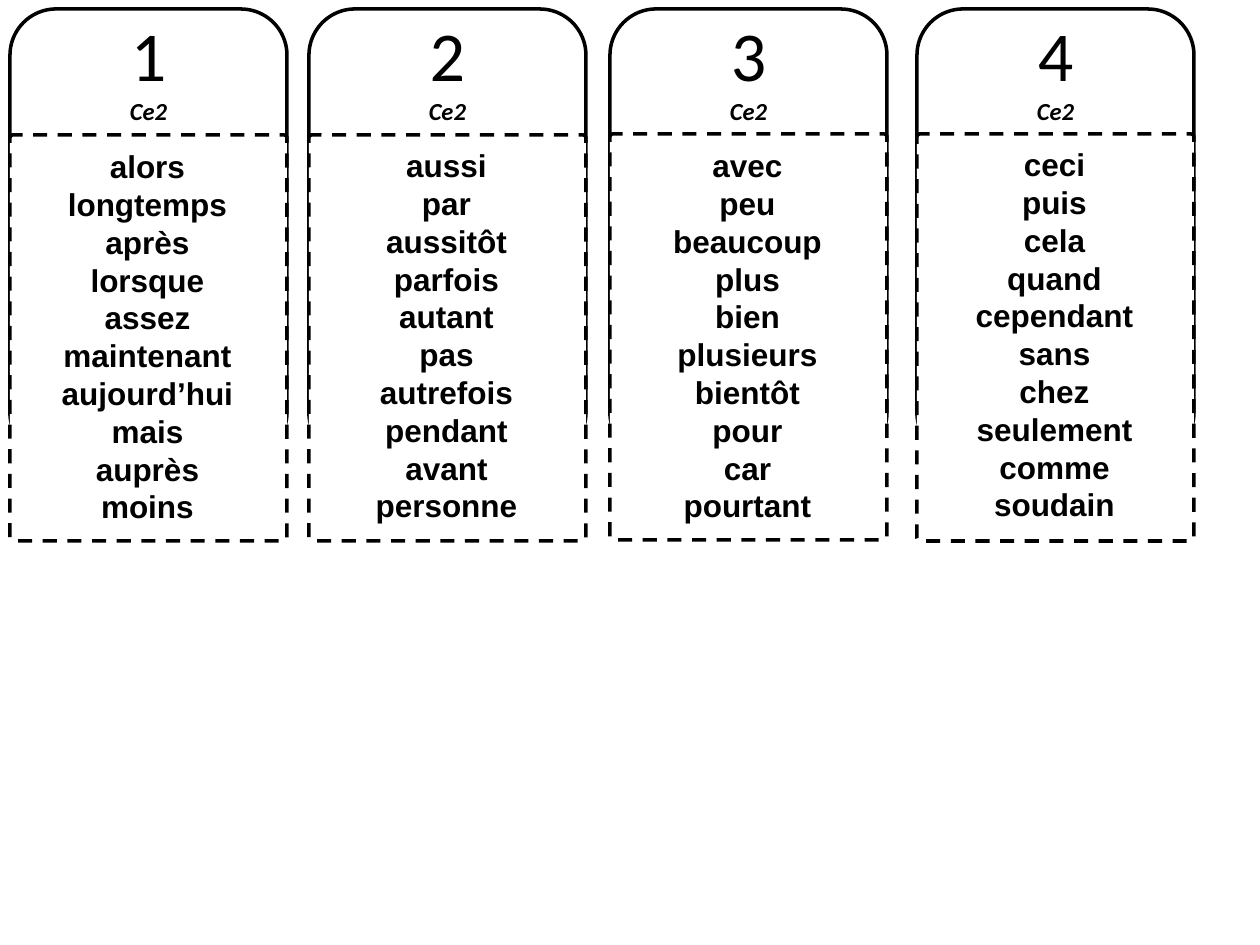
from pptx import Presentation
from pptx.dml.color import RGBColor
from pptx.enum.dml import MSO_LINE
from pptx.enum.shapes import MSO_SHAPE
from pptx.enum.text import MSO_ANCHOR, MSO_AUTO_SIZE, PP_ALIGN
from pptx.util import Emu, Pt

ROUNDED = MSO_SHAPE.ROUNDED_RECTANGLE
DASH = MSO_LINE.DASH
MIDDLE = MSO_ANCHOR.MIDDLE
CENTER = PP_ALIGN.CENTER
GROW = MSO_AUTO_SIZE.SHAPE_TO_FIT_TEXT

BLACK, WHITE = "000000", "FFFFFF"
CARD_TOP, CARD_WIDTH, CARD_HEIGHT = 9, 277, 450
WORDS_HEIGHT = 394
HEADING_BOTTOM_INSET = 331

NUMBER_FORMAT = {"name": "Calibri", "size": Pt(40)}
LEVEL_FORMAT = {"name": "Calibri", "size": Pt(14), "bold": True, "italic": True}
WORD_FORMAT = {"name": "Arial", "size": Pt(18), "bold": True}

# left, top of the dashed frame, its height, top of the words, their width, words
CARDS = [
    (10, 135, 406, 141, 215,
     "alors longtemps après lorsque assez maintenant aujourd’hui mais auprès moins"),
    (309, 135, 406, 140, 215,
     "aussi par aussitôt parfois autant pas autrefois pendant avant personne"),
    (610, 134, 406, 140, 215,
     "avec peu beaucoup plus bien plusieurs bientôt pour car pourtant"),
    (917, 134, 407, 139, 241,
     "ceci puis cela quand cependant sans chez seulement comme soudain"),
]


def px(length):
    return Emu(round(length * 914400 / 126))


def color(hex_value):
    return RGBColor.from_string(hex_value)


def write_lines(frame, lines):
    """Fill a text frame with centred paragraphs from (text, format) pairs."""
    for index, (text, font_format) in enumerate(lines):
        paragraph = frame.paragraphs[0] if index == 0 else frame.add_paragraph()
        paragraph.alignment = CENTER
        run = paragraph.add_run()
        run.text = text
        run.font.color.rgb = color(BLACK)
        for key, value in font_format.items():
            setattr(run.font, key, value)


def add_outline(slide, left, top, width, height):
    outline = slide.shapes.add_shape(ROUNDED, px(left), px(top), px(width), px(height))
    outline.shadow.inherit = False
    outline.fill.background()
    outline.line.color.rgb = color(BLACK)
    outline.line.width = Pt(2)
    return outline


def add_heading(slide, left, top, number):
    """Draw the card with its number and level at the top."""
    card = add_outline(slide, left, top, CARD_WIDTH, CARD_HEIGHT)
    frame = card.text_frame
    frame.word_wrap = True
    frame.vertical_anchor = MIDDLE
    frame.margin_top = 0
    frame.margin_bottom = px(HEADING_BOTTOM_INSET)
    write_lines(frame, [(str(number), NUMBER_FORMAT), ("Ce2", LEVEL_FORMAT)])


def add_words_frame(slide, left, top, height):
    words_frame = add_outline(slide, left, top, CARD_WIDTH, height)
    words_frame.adjustments[0] = 0.01
    words_frame.fill.solid()
    words_frame.fill.fore_color.rgb = color(WHITE)
    words_frame.line.dash_style = DASH


def add_words(slide, card_left, top, width, words):
    left = card_left + (CARD_WIDTH - width) // 2 - 1
    box = slide.shapes.add_textbox(px(left), px(top), px(width), px(WORDS_HEIGHT))
    box.text_frame.word_wrap = True
    box.text_frame.auto_size = GROW
    write_lines(box.text_frame, [(word, WORD_FORMAT) for word in words])


def main():
    presentation = Presentation()
    presentation.slide_width = px(1260)
    presentation.slide_height = px(945)
    slide = presentation.slides.add_slide(presentation.slide_layouts[6])

    for number, (left, frame_top, frame_height, *_) in enumerate(CARDS, start=1):
        add_heading(slide, left, CARD_TOP, number)
        add_words_frame(slide, left, frame_top, frame_height)
    for left, _, _, words_top, words_width, words in CARDS:
        add_words(slide, left, words_top, words_width, words.split())

    presentation.save("out.pptx")


if __name__ == "__main__":
    main()
